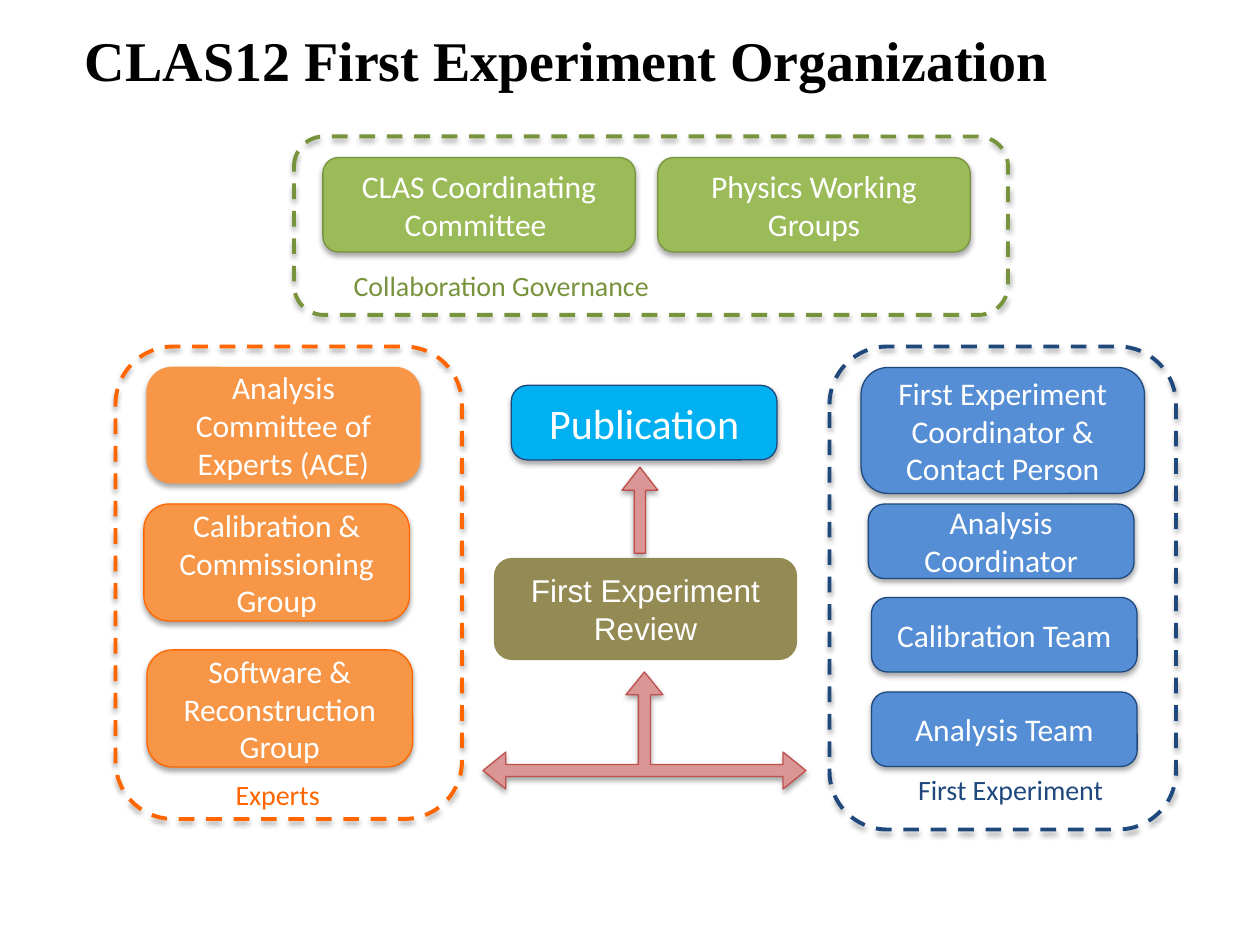
import pptx
import pptx.util
import pptx.dml.color
import pptx.enum.dml
import pptx.enum.shapes
import pptx.enum.text
import pptx.oxml.ns
import lxml.etree

COLUMNS = 120
ROWS = 90
ORANGE, EXPERTS = "F79646", "FF6600"
BLUE, NAVY = "558ED5", "1F497D"
GREEN, OLIVE = "9BBB59", "77933C"
KHAKI, PINK, WHITE = "948A54", "D99694", "FFFFFF"

Kind = pptx.enum.shapes.MSO_SHAPE
Align = pptx.enum.text.PP_ALIGN
color = pptx.dml.color.RGBColor.from_string

deck = pptx.Presentation()
deck.slide_width = pptx.util.Inches(10)
deck.slide_height = pptx.util.Inches(7.5)
page = deck.slides.add_slide(deck.slide_layouts[6])
column = deck.slide_width / COLUMNS
row = deck.slide_height / ROWS


def add_figure(kind, area, adjustments, fill, line, weight=0.75, shadow=True):
    """Add a preset shape; area is left, top, width, height in grid units."""
    left, top, width, height = area
    figure = page.shapes.add_shape(kind, int(left * column), int(top * row),
                                   int(width * column), int(height * row))
    for index, value in enumerate(adjustments):
        figure.adjustments[index] = value
    if fill:
        figure.fill.solid()
        figure.fill.fore_color.rgb = color(fill)
    else:
        figure.fill.background()
    figure.line.color.rgb = color(line)
    figure.line.width = pptx.util.Pt(weight)
    figure.shadow.inherit = False
    if shadow:
        qn = pptx.oxml.ns.qn
        effects = figure._element.spPr.find(qn("a:effectLst"))
        outer = lxml.etree.SubElement(effects, qn("a:outerShdw"), blurRad="40000", dist="23000",
                                      dir="5400000", rotWithShape="0")
        black = lxml.etree.SubElement(outer, qn("a:srgbClr"), val="000000")
        lxml.etree.SubElement(black, qn("a:alpha"), val="35000")
    return figure


def write(box, text, size, ink, font="Calibri", align=Align.CENTER, wrap=True, bold=False):
    frame = box.text_frame
    frame.word_wrap = wrap
    frame.text = text
    for para in frame.paragraphs:
        para.alignment = align
        para.font.size = pptx.util.Pt(size)
        para.font.name = font
        para.font.bold = bold
        para.font.color.rgb = color(ink)


title = page.shapes.add_textbox(int(-column), int(3 * row), int(110 * column), int(5.2 * row))
title.text_frame.vertical_anchor = pptx.enum.text.MSO_ANCHOR.MIDDLE
write(title, "CLAS12 First Experiment Organization", 32, "000000", "Times New Roman", bold=True)

# Dashed group frames with their labels
groups = [
    ("Collaboration Governance", OLIVE, (28, 13, 68, 17), (32.5, 25, 30.5)),
    ("Experts", EXPERTS, (11, 33, 33, 45), (21.25, 73.5, 10.5)),
    ("First Experiment", NAVY, (79, 33, 33, 46), (86.25, 73, 20)),
]
for name, tone, area, (left, top, width) in groups:
    outline = add_figure(Kind.ROUNDED_RECTANGLE, area, [0.167], None, tone, 2.25)
    outline.line.dash_style = pptx.enum.dml.MSO_LINE.DASH
    label = page.shapes.add_textbox(int(left * column), int(top * row),
                                    int(width * column), int(4.35 * row))
    write(label, name, 16, tone, align=Align.LEFT, wrap=False)

# Arrows leading up to review and publication
add_figure(Kind.LEFT_RIGHT_UP_ARROW, (46, 64, 30.75, 11.15), [0.103, 0.158, 0.195], PINK, "C0504D")
add_figure(Kind.UP_ARROW, (59.25, 44.5, 3.4, 8.2), [0.315, 0.648], PINK, "BF4C48")

# Bodies: text, area, corner, fill, line
bodies = [
    ("CLAS Coordinating Committee ", (30.75, 15, 29.75, 9), 0.167, GREEN, OLIVE),
    ("Physics Working Groups", (62.65, 15, 29.75, 9), 0.167, GREEN, OLIVE),
    ("Analysis Committee of Experts (ACE)", (14, 35, 26, 11), 0.215, ORANGE, ORANGE),
    ("Calibration & Commissioning Group", (13.7, 48, 25.3, 11.15), 0.215, ORANGE, EXPERTS),
    ("Software & Reconstruction\nGroup", (14, 61.9, 25.3, 11.15), 0.215, ORANGE, EXPERTS),
    ("First Experiment Coordinator & Contact Person", (82, 35, 27, 12), 0.215, BLUE, NAVY),
    ("Analysis Coordinator", (82.7, 48, 25.3, 7.1), 0.215, BLUE, NAVY),
    ("Calibration Team", (83, 56.9, 25.3, 7.1), 0.215, BLUE, NAVY),
    ("Analysis Team", (83, 65.9, 25.3, 7.1), 0.215, BLUE, NAVY),
]
for text, area, corner, fill, line in bodies:
    write(add_figure(Kind.ROUNDED_RECTANGLE, area, [corner], fill, line), text, 18, WHITE)

review = add_figure(Kind.ROUNDED_RECTANGLE, (47.2, 53.3, 28.55, 9.4), [0.167], KHAKI, KHAKI,
                    2, shadow=False)
write(review, "First Experiment Review", 18, WHITE, "Arial")
publication = add_figure(Kind.ROUNDED_RECTANGLE, (48.7, 36.7, 25.3, 7.1), [0.215], "00B0F0", NAVY)
write(publication, "Publication", 24, WHITE)

deck.save("out.pptx")
